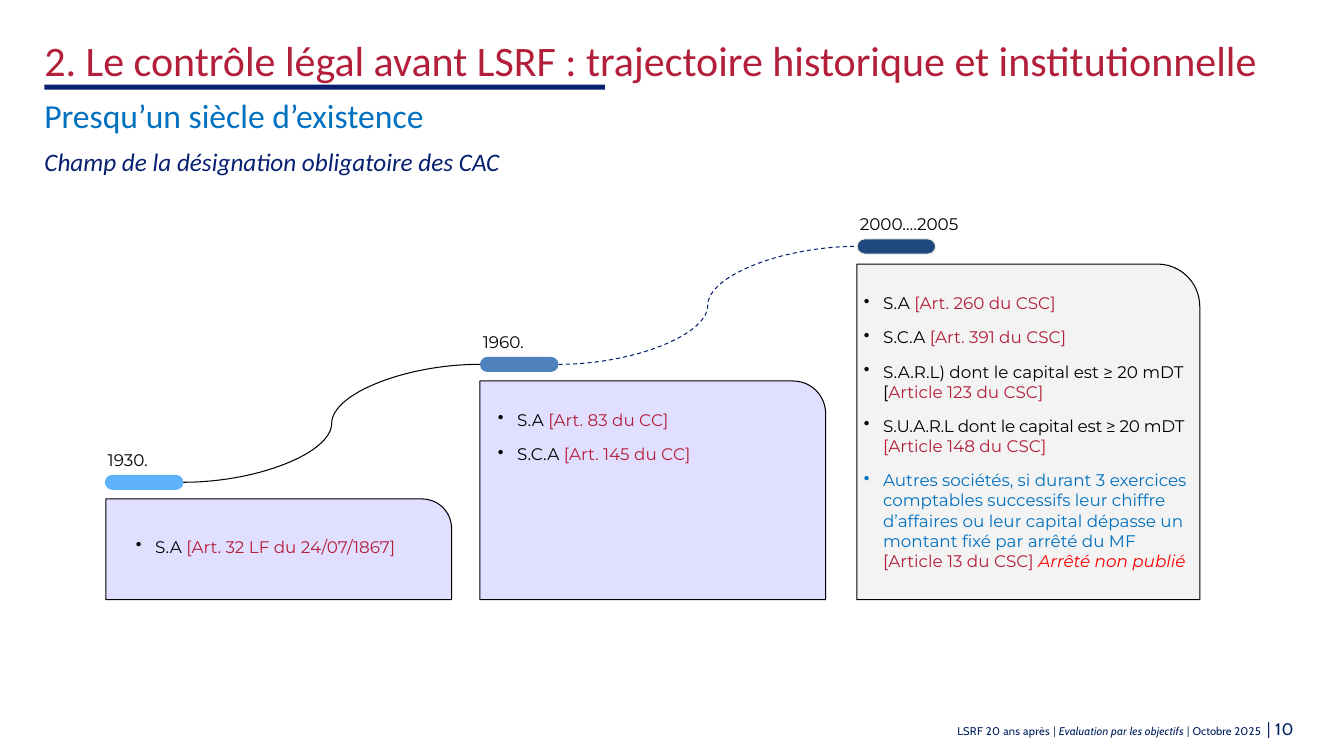
from dataclasses import dataclass, replace
from typing import Optional

from pptx import Presentation
from pptx.dml.color import RGBColor
from pptx.enum.dml import MSO_LINE_DASH_STYLE as Dash
from pptx.enum.shapes import MSO_CONNECTOR as Connector, MSO_SHAPE as Shape
from pptx.enum.text import MSO_ANCHOR as Anchor, PP_ALIGN as Align
from pptx.oxml.ns import qn
from pptx.oxml.xmlchemy import OxmlElement
from pptx.util import Inches, Pt

COLORS = {
    "red": "B31E3A", "alert": "FF0000", "blue": "0070C0", "navy": "072070",
    "footer": "002060", "black": "000000", "violet": "6C63FF", "gray": "D9D9D9",
    "light": "5EB2FC", "medium": "4F81BD", "dark": "1F497D", "cream": "EEECE1",
}
PILL_WIDTH, PILL_HEIGHT = 0.78, 0.15
FLOOR = 5.95
INDENT = 0.19

Box = tuple[float, float, float, float]


@dataclass(frozen=True)
class Run:
    text: str
    color: str = "black"
    size: float = 12
    font: str = "Montserrat"
    italic: bool = False
    spacing: float = 0


@dataclass(frozen=True)
class Heading:
    box: Box
    run: Run
    align: Align = Align.LEFT


@dataclass(frozen=True)
class Step:
    year: str
    left: float
    label_width: float
    pill_top: float
    pill_color: str
    panel: Box
    corner: float
    panel_color: str
    opacity: int
    text_box: Box
    anchor: Anchor
    items: list[list[Run]]
    pill_line: Optional[str] = None


def rgb(name: str) -> RGBColor:
    return RGBColor.from_string(COLORS[name])


def add_runs(paragraph, runs: list[Run]) -> None:
    for item in runs:
        run = paragraph.add_run()
        run.text = item.text
        run.font.name = item.font
        run.font.size = Pt(item.size)
        run.font.italic = item.italic
        run.font.color.rgb = rgb(item.color)
        if item.spacing:
            run._r.get_or_add_rPr().set("spc", str(round(item.spacing * 100)))


def add_text(slide, box: Box, paragraphs: list[list[Run]], inset: float = 0,
             anchor: Anchor = Anchor.TOP, align: Align = Align.LEFT,
             bullets: bool = False, before: float = 0) -> None:
    frame = slide.shapes.add_textbox(*map(Inches, box)).text_frame
    frame.word_wrap = True
    frame.vertical_anchor = anchor
    frame.margin_left = frame.margin_right = Inches(inset)
    frame.margin_top = frame.margin_bottom = Inches(inset)
    for index, runs in enumerate(paragraphs):
        paragraph = frame.add_paragraph() if index else frame.paragraphs[0]
        paragraph.alignment = align
        paragraph.space_before = Pt(before)
        if bullets:
            paragraph.space_after = Pt(10)
            properties = paragraph._p.get_or_add_pPr()
            properties.set("marL", str(Inches(INDENT)))
            properties.set("indent", str(-Inches(INDENT)))
            bullet = OxmlElement("a:buChar")
            bullet.set("char", "•")
            properties.append(bullet)
        add_runs(paragraph, runs)


def add_block(slide, kind: Shape, box: Box, fill: str, line: Optional[str] = None,
              corner: Optional[float] = None, opacity: int = 100) -> None:
    shape = slide.shapes.add_shape(kind, *map(Inches, box))
    shape.shadow.inherit = False
    if corner is not None:
        shape.adjustments[0] = corner
    shape.fill.solid()
    shape.fill.fore_color.rgb = rgb(fill)
    if opacity < 100:
        alpha = OxmlElement("a:alpha")
        alpha.set("val", str(opacity * 1000))
        shape._element.spPr.find(qn("a:solidFill"))[0].append(alpha)
    if line:
        shape.line.color.rgb = rgb(line)
        shape.line.width = Pt(0.75)
    else:
        shape.line.fill.background()


def add_step(slide, step: Step) -> None:
    add_block(slide, Shape.ROUND_1_RECTANGLE, step.panel, step.panel_color,
              "black", step.corner, step.opacity)
    label = (step.left - 0.07, step.pill_top - 0.29, step.label_width, 0.34)
    add_text(slide, label, [[Run(step.year)]], 0.1, Anchor.BOTTOM)
    pill = (step.left, step.pill_top, PILL_WIDTH, PILL_HEIGHT)
    add_block(slide, Shape.ROUNDED_RECTANGLE, pill, step.pill_color,
              step.pill_line, 0.5)
    add_text(slide, step.text_box, step.items, 0.1, step.anchor, bullets=True)


def add_curve(slide, start: Step, end: Step, color: str, dashed: bool) -> None:
    middle = PILL_HEIGHT / 2
    points = (start.left + PILL_WIDTH, start.pill_top + middle,
              end.left, end.pill_top + middle)
    curve = slide.shapes.add_connector(Connector.CURVE, *map(Inches, points))
    curve.line.color.rgb = rgb(color)
    curve.line.width = Pt(0.75)
    if dashed:
        curve.line.dash_style = Dash.DASH
    curve._element.spPr.append(OxmlElement("a:effectLst"))


def article(company: str, reference: str, spacing: float = 0) -> list[Run]:
    return [Run(company, spacing=spacing), Run(reference, "red")]


HEADINGS = [
    Heading((0.44, 0.34, 12.4, 0.52),
            Run("2. Le contrôle légal avant LSRF : trajectoire historique et "
                "institutionnelle", "red", 30, "Calibri")),
    Heading((0.44, 0.94, 5.73, 0.42),
            Run("Presqu’un siècle d’existence", "blue", 24, "Calibri")),
    Heading((0.44, 1.45, 4.91, 0.32),
            Run("Champ de la désignation obligatoire des CAC", "navy", 18,
                "Calibri", True), Align.JUSTIFY),
]

STEPS = [
    Step("1930.", 1.04, 0.69, 4.71, "light", (1.05, 4.95, 3.43, FLOOR - 4.95),
         0.294, "violet", 20, (1.25, 5.22, 2.88, 0.44), Anchor.TOP,
         [article("S.A ", "[Art. 32 LF du 24/07/1867]")]),
    Step("1960.", 4.76, 0.69, 3.54, "medium", (4.76, 3.78, 3.43, FLOOR - 3.78),
         0.149, "violet", 20, (4.84, 3.96, 3.23, 0.75), Anchor.MIDDLE,
         [article("S.A ", "[Art. 83 du CC]"),
          article("S.C.A ", "[Art. 145 du CC]")]),
    Step("2000….2005", 8.5, 1.33, 2.37, "dark", (8.5, 2.62, 3.4, FLOOR - 2.62),
         0.126, "gray", 30, (8.47, 2.62, 3.43, 3.33), Anchor.MIDDLE,
         [article("S.A ", "[Art. 260 du CSC]"),
          article("S.C.A ", "[Art. 391 du CSC]"),
          article("S.A.R.L) dont le capital est ≥ 20 mDT [", "Article 123 du CSC]"),
          article("S.U.A.R.L dont le capital est ≥ 20 mDT ",
                  "[Article 148 du CSC]", -0.2),
          [Run("Autres sociétés, si durant 3 exercices comptables successifs leur "
               "chiffre d’affaires ou leur capital dépasse un montant fixé par "
               "arrêté du MF ", "blue"),
           Run("[Article 13 du CSC] ", "red"),
           Run("Arrêté non publié", "alert", italic=True)]], "cream"),
]

CABIN = Run("", "footer", 8, "Cabin")
LATO = replace(CABIN, font="Lato")
FOOTER = [
    replace(CABIN, text="LSRF 20 ans après ", spacing=0.2),
    replace(LATO, text="| "),
    replace(CABIN, text="Evaluation par les objectifs ", italic=True, spacing=0.1),
    replace(LATO, text="| "),
    replace(CABIN, text="Octobre "),
    replace(CABIN, text="2025", spacing=0.2),
    replace(CABIN, text=" ", spacing=2),
    replace(LATO, text="| ", size=12),
    replace(CABIN, text="10", size=12, spacing=0.3),
]


def main() -> None:
    presentation = Presentation()
    presentation.slide_width = Inches(13.33)
    presentation.slide_height = Inches(7.5)
    slide = presentation.slides.add_slide(presentation.slide_layouts[6])

    # Headings and rule
    add_block(slide, Shape.RECTANGLE, (0.44, 0.84, 5.56, 0.05), "navy")
    for heading in HEADINGS:
        add_text(slide, heading.box, [[heading.run]], align=heading.align, before=1)

    # Rising timeline
    for step in STEPS:
        add_step(slide, step)
    add_curve(slide, STEPS[0], STEPS[1], "black", False)
    add_curve(slide, STEPS[1], STEPS[2], "navy", True)

    # Footer
    add_text(slide, (7.16, 7.13, 5.67, 0.2), [FOOTER], align=Align.RIGHT)
    presentation.save("out.pptx")


if __name__ == "__main__":
    main()
